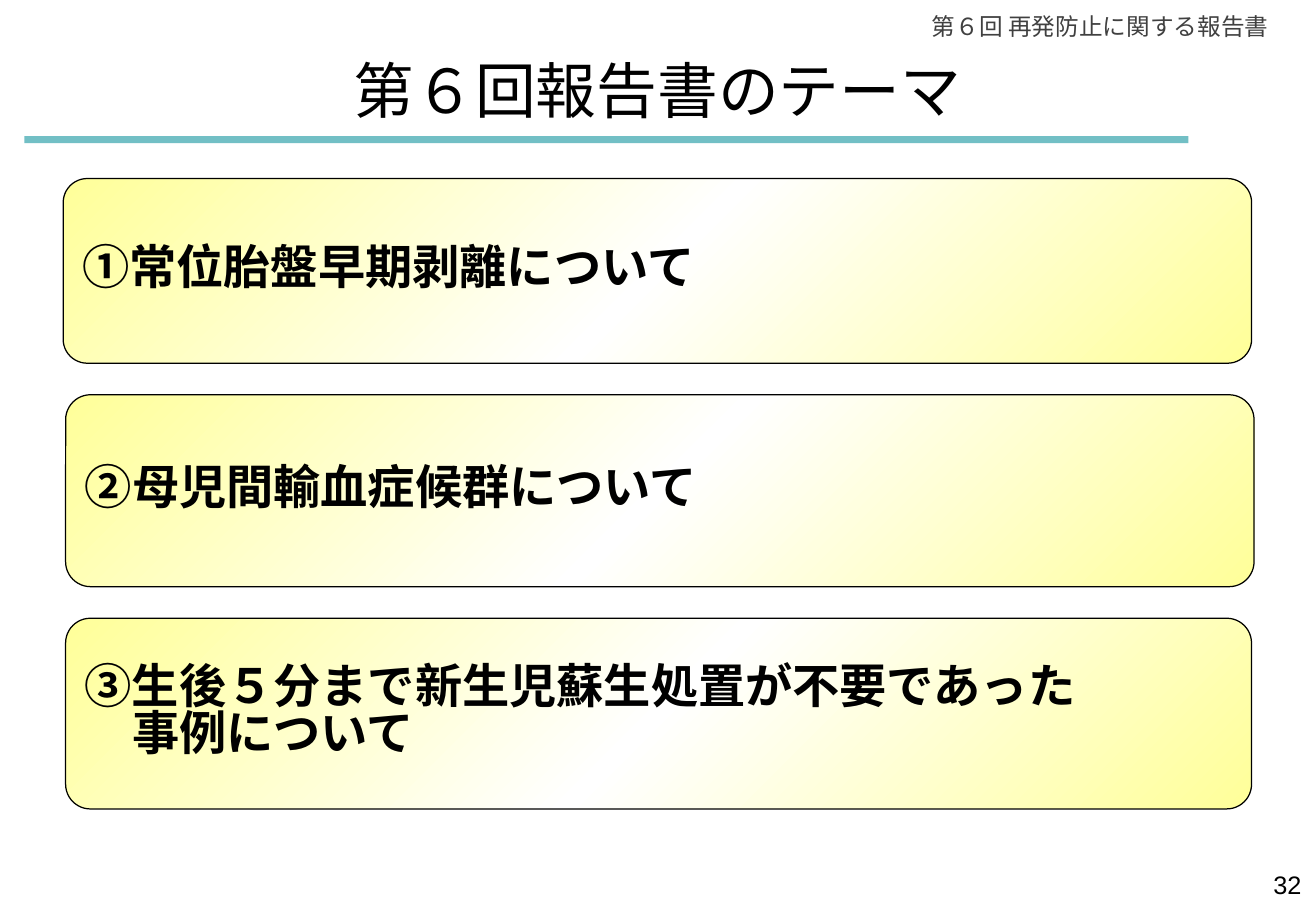
from copy import deepcopy
from dataclasses import dataclass

from pptx import Presentation
from pptx.dml.color import RGBColor as Color
from pptx.enum.shapes import MSO_SHAPE as Shape
from pptx.enum.text import MSO_ANCHOR as Anchor, PP_ALIGN as Align
from pptx.oxml.ns import qn
from pptx.util import Emu, Pt


@dataclass(frozen=True)
class Theme:
    latin: str = "Arial"
    japanese: str = "Noto Sans CJK JP"
    black: str = "000000"
    grey: str = "404040"
    teal: str = "72BFC5"
    yellow: str = "FFFF99"
    white: str = "FFFFFF"
    title: int = 36
    topic: int = 28
    number: int = 15
    header: int = 14


THEME = Theme()
PX = 9144  # 100 px to the inch


def place(left, top, width, height):
    """Turn px into the EMU lengths of a frame."""
    return [Emu(value * PX) for value in (left, top, width, height)]


def write(para, text, size, color=THEME.black, font=THEME.latin, bold=False, align=Align.LEFT):
    para.alignment = align
    span = para.add_run()
    span.text = text
    span.font.size = Pt(size)
    span.font.bold = bold
    span.font.name = font
    span.font.color.rgb = Color.from_string(color)
    east_asian = span.font._element.makeelement(qn("a:ea"), {"typeface": THEME.japanese})
    span.font._element.find(qn("a:latin")).addnext(east_asian)


deck = Presentation()
deck.slide_width, deck.slide_height = Emu(1083 * PX), Emu(750 * PX)
page = deck.slides.add_slide(deck.slide_layouts[5])

# Title and rule
title = page.shapes.title
title.left, title.top, title.width, title.height = place(278, 38, 526, 71)
title.text_frame.word_wrap = False
title.text_frame.vertical_anchor = Anchor.MIDDLE
write(title.text_frame.paragraphs[0], "第６回報告書のテーマ", THEME.title,
      font=THEME.japanese, align=Align.CENTER)

rule = page.shapes.add_shape(Shape.RECTANGLE, *place(20, 112, 958, 6))
rule.shadow.inherit = False
rule.fill.solid()
rule.fill.fore_color.rgb = Color.from_string(THEME.teal)
rule.line.fill.background()

# Header and page number
labels = [
    ((738, 5, 316, 34), "第６回 再発防止に関する報告書", THEME.header, THEME.grey),
    ((828, 711, 253, 39), "32", THEME.number, THEME.black),
]
for frame, text, size, color in labels:
    label = page.shapes.add_textbox(*place(*frame))
    label.text_frame.word_wrap = True
    write(label.text_frame.paragraphs[0], text, size, color, align=Align.RIGHT)

# Topics
topics = [
    ((52, 147, 978, 152), THEME.latin, ["①常位胎盤早期剥離について"]),
    ((54, 325, 978, 158), THEME.japanese, ["②母児間輸血症候群について"]),
    ((54, 509, 976, 157), THEME.japanese,
     ["③生後５分まで新生児蘇生処置が不要であった", "事例について"]),
]
for frame, font, lines in topics:
    box = page.shapes.add_shape(Shape.ROUNDED_RECTANGLE, *place(*frame))
    box.adjustments[0] = 0.13
    box.shadow.inherit = False
    box.line.color.rgb = Color.from_string(THEME.black)
    box.line.width = Pt(0.75)

    box.fill.gradient()
    box.fill.gradient_angle = 315
    first_stop = box._element.spPr.find(".//" + qn("a:gs"))
    first_stop.addnext(deepcopy(first_stop))
    colors = (THEME.yellow, THEME.white, THEME.yellow)
    for stop, position, color in zip(box.fill.gradient_stops, (0, 0.5, 1), colors):
        stop.position = position
        stop.color.rgb = Color.from_string(color)

    text_frame = box.text_frame
    text_frame.word_wrap = True
    text_frame.vertical_anchor = Anchor.MIDDLE
    for index, line in enumerate(lines):
        para = text_frame.add_paragraph() if index else text_frame.paragraphs[0]
        para.line_spacing = 0.8
        if index:
            para.space_before = Pt(1)
            # Align with the text after the circled number
            para._p.get_or_add_pPr().set("marL", str(Pt(THEME.topic)))
        write(para, line, THEME.topic, font=font, bold=True)

deck.save("out.pptx")
